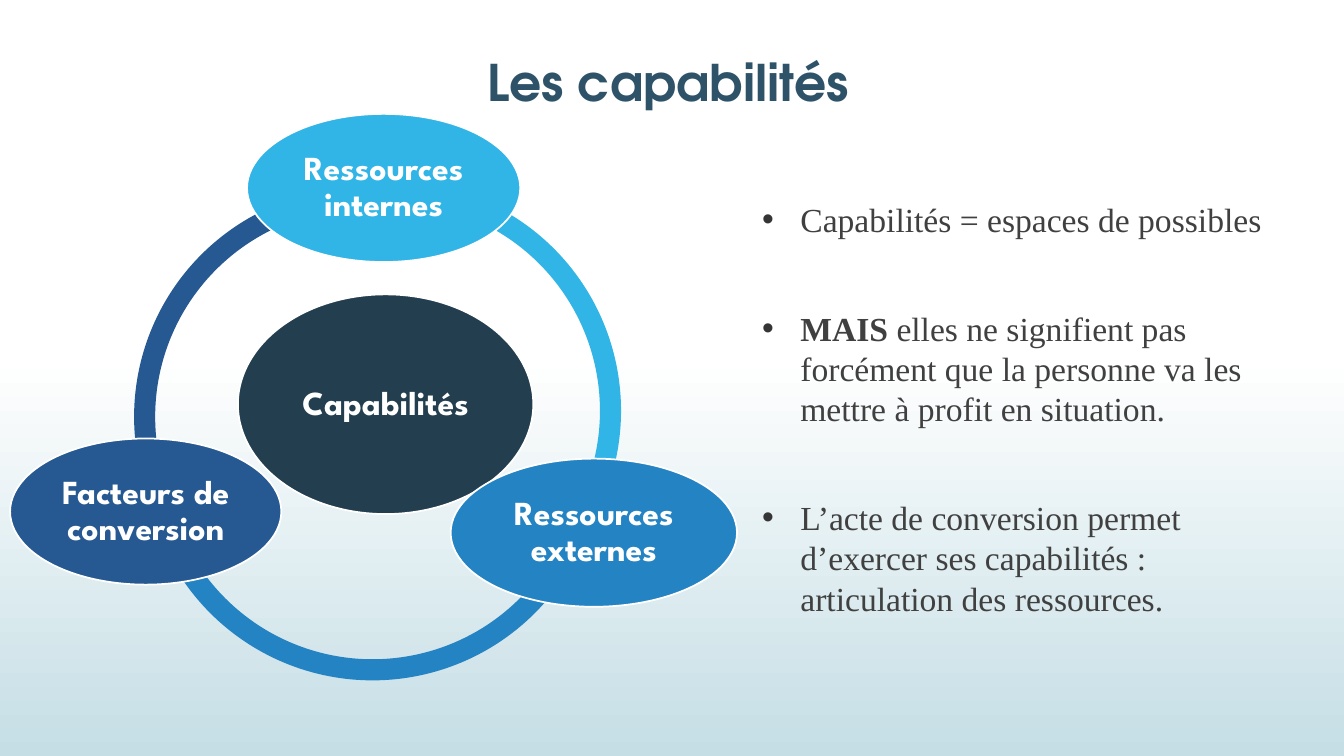
from lxml import etree
from pptx import Presentation
from pptx.dml.color import RGBColor
from pptx.enum.shapes import MSO_SHAPE as Shape
from pptx.enum.text import MSO_ANCHOR as Anchor, MSO_AUTO_SIZE as AutoSize, PP_ALIGN as Align
from pptx.oxml.ns import qn
from pptx.util import Inches, Pt

COLORS = {
    "white": "FFFFFF", "mist": "C5DEE5", "title": "2E5369",
    "body": "404040", "bullet": "353535", "core": "233E4F",
    "navy": "265991", "blue": "2483C3", "sky": "31B4E6",
}

# Ring arcs: left, top, start and end angle in degrees, colour
ARC_SIZE = 4.55
ARC_THICKNESS = 0.046
ARCS = [
    (1.33, 1.86, 152.54, 280.08, "navy"),
    (1.42, 2.2, 2.65, 182.65, "blue"),
    (1.61, 1.8, 264.37, 32.89, "sky"),
]

# Ellipses: left, top, width, height, colour, label
ELLIPSES = [
    (2.36, 2.92, 2.93, 2.18, "core", "Capabilités"),
    (2.45, 1.13, 2.71, 1.47, "sky", "Ressources internes"),
    (4.47, 4.55, 2.84, 1.47, "blue", "Ressources externes"),
    (0.1, 4.35, 2.69, 1.45, "navy", "Facteurs de conversion"),
]

# Bullets: bold opening, remaining text
BULLETS = [
    ("", "Capabilités = espaces de possibles"),
    ("MAIS", " elles ne signifient pas forcément que la personne va les "
             "mettre à profit en situation."),
    ("", "L’acte de conversion permet d’exercer ses capabilités : "
         "articulation des ressources."),
]


def color(name):
    return RGBColor.from_string(COLORS[name])


def style_font(font, name, size, color_name, bold=False):
    font.name = name
    font.size = Pt(size)
    font.bold = bold
    font.color.rgb = color(color_name)


def set_background(page):
    fill = page.background.fill
    fill.gradient()
    fill.gradient_angle = 270
    for stop, position, name in zip(fill.gradient_stops, (0.47, 1), ("white", "mist")):
        stop.position = position
        stop.color.rgb = color(name)


def set_title(page, text):
    title = page.shapes.title
    title.left, title.top = Inches(0.51), Inches(0.46)
    title.width, title.height = Inches(12.23), Inches(1.13)
    frame = title.text_frame
    frame.text = text
    frame.auto_size = AutoSize.NONE
    frame.vertical_anchor = Anchor.TOP
    para = frame.paragraphs[0]
    para.alignment = Align.CENTER
    style_font(para.runs[0].font, "TeX Gyre Adventor", 36, "title", bold=True)


def add_filled_shape(page, kind, left, top, width, height, color_name):
    shape = page.shapes.add_shape(
        kind, Inches(left), Inches(top), Inches(width), Inches(height))
    shape.shadow.inherit = False
    shape.fill.solid()
    shape.fill.fore_color.rgb = color(color_name)
    return shape


def add_arc(page, left, top, start, end, color_name):
    arc = add_filled_shape(page, Shape.BLOCK_ARC, left, top, ARC_SIZE, ARC_SIZE, color_name)
    arc.line.fill.background()
    # Angles are stored in 60000ths of a degree, adjustments in 100000ths
    arc.adjustments[0] = start * 0.6
    arc.adjustments[1] = end * 0.6
    arc.adjustments[2] = ARC_THICKNESS


def add_ellipse(page, left, top, width, height, color_name, label):
    ellipse = add_filled_shape(page, Shape.OVAL, left, top, width, height, color_name)
    ellipse.line.color.rgb = color("white")
    ellipse.line.width = Pt(1.25)
    frame = ellipse.text_frame
    frame.text = label
    frame.word_wrap = True
    frame.vertical_anchor = Anchor.MIDDLE
    frame.margin_left = frame.margin_right = Inches(0.03)
    frame.margin_top = frame.margin_bottom = Inches(0.03)
    para = frame.paragraphs[0]
    para.alignment = Align.CENTER
    para.line_spacing = 0.9
    style_font(para.runs[0].font, "League Spartan", 24, "white", bold=True)


def set_bullet(para):
    properties = para._p.get_or_add_pPr()
    properties.set("marL", str(Inches(0.38)))
    properties.set("indent", str(Inches(-0.38)))
    bullet_color = etree.SubElement(properties, qn("a:buClr"))
    etree.SubElement(bullet_color, qn("a:srgbClr"), val=COLORS["bullet"])
    etree.SubElement(properties, qn("a:buFont"), typeface="Arial")
    etree.SubElement(properties, qn("a:buChar"), char="•")


def add_bullets(page, bullets):
    box = page.shapes.add_textbox(Inches(7.46), Inches(1.92), Inches(5.28), Inches(5.03))
    frame = box.text_frame
    frame.word_wrap = True
    for index, (opening, rest) in enumerate(bullets):
        para = frame.add_paragraph() if index else frame.paragraphs[0]
        para.space_before = Pt(49 if index else 0)
        set_bullet(para)
        for text, bold in ((opening, True), (rest, False)):
            if text:
                span = para.add_run()
                span.text = text
                style_font(span.font, "Times New Roman", 24, "body", bold)


def main():
    deck = Presentation()
    deck.slide_width, deck.slide_height = Inches(13.33), Inches(7.5)
    page = deck.slides.add_slide(deck.slide_layouts.get_by_name("Title Only"))
    set_background(page)
    set_title(page, "Les capabilités")

    # Ring diagram, arcs behind ellipses
    for arc in ARCS:
        add_arc(page, *arc)
    for ellipse in ELLIPSES:
        add_ellipse(page, *ellipse)

    # Explanations on the right
    add_bullets(page, BULLETS)
    deck.save("out.pptx")


if __name__ == "__main__":
    main()
